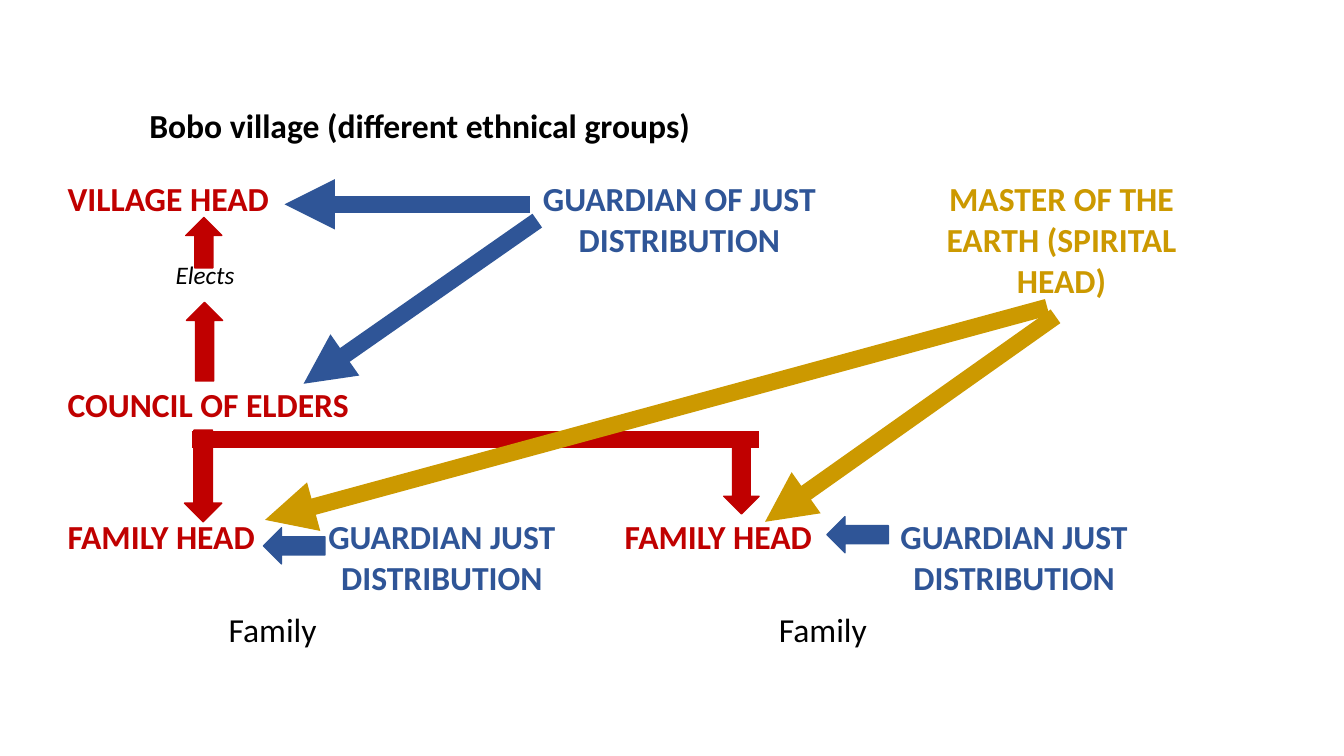
from lxml import etree
from pptx import Presentation
from pptx import util as u
from pptx.dml.color import RGBColor
from pptx.enum import shapes, text
from pptx.oxml.ns import qn

RED, BLUE, GOLD, BLACK = "C00000", "2F5597", "CC9900", "000000"
LEFT, CENTER, RIGHT = text.PP_ALIGN.LEFT, text.PP_ALIGN.CENTER, text.PP_ALIGN.RIGHT
NO_STYLE = "{2D5ABB26-0587-4C30-8999-92F81FD0307C}"

COLS = [5.33, 4.32, 1.19, 3.2, 5.26, 1.35, 1.04, 3.61, 3.61]
ROWS = [3.33, 1.85, 3.33, 2.34, 1.17]
SPANS = [[2, 5, 2], [4, 1, 2, 1, 1], [4, 1, 2, 1, 1], [1, 3, 1, 4], [3, 1, 2, 2, 1]]
ROLES = [
    (0, 0, "VILLAGE HEAD", RED, LEFT, True),
    (0, 2, "GUARDIAN OF JUST DISTRIBUTION", BLUE, CENTER, True),
    (0, 7, "MASTER OF THE EARTH (SPIRITAL HEAD)", GOLD, CENTER, True),
    (2, 0, "COUNCIL OF ELDERS", RED, LEFT, True),
    (3, 0, "FAMILY HEAD", RED, LEFT, True),
    (3, 1, "GUARDIAN JUST DISTRIBUTION", BLUE, CENTER, True),
    (3, 4, "FAMILY HEAD", RED, LEFT, True),
    (3, 5, "GUARDIAN JUST DISTRIBUTION", BLUE, CENTER, True),
    (4, 0, "Family", BLACK, CENTER, False),
    (4, 4, "Family", BLACK, RIGHT, False),
]
BLOCK_ARROWS = [
    (3.2, 6.45, 0.94, 2.31, 0, RED),
    (16.79, 6.88, 0.89, 1.68, 0, RED),
    (3.23, 1.09, 0.91, 1.27, 180, RED),
    (3.25, 3.23, 0.91, 1.98, 180, RED),
    (19.71, 8.31, 0.91, 1.55, 90, BLUE),
    (5.51, 8.59, 0.91, 1.55, 90, BLUE),
]
LINES = [
    (3.38, 6.68, 17.68, 6.68, RED, False),
    (12.09, 1.17, 6.2, 5.28, BLUE, True),
    (25.15, 3.58, 17.83, 8.76, GOLD, True),
    (24.94, 3.35, 5.23, 8.71, GOLD, True),
    (11.91, 0.76, 5.72, 0.76, BLUE, True),
]


def rgb(value):
    return RGBColor.from_string(value)


def write(p, content, size=24, color=BLACK, bold=False, italic=False, align=LEFT):
    p.alignment = align
    r = p.add_run()
    r.text = content
    r.font.name = "Calibri"
    r.font.size = u.Pt(size)
    r.font.bold = bold
    r.font.italic = italic
    r.font.color.rgb = rgb(color)


def add_title(s, left, top, width, height):
    sp = s.shapes.title
    sp.left, sp.top, sp.width, sp.height = map(u.Cm, (left, top, width, height))
    tf = sp.text_frame
    tf.word_wrap = False
    tf.auto_size = text.MSO_AUTO_SIZE.NONE
    tf.vertical_anchor = text.MSO_ANCHOR.TOP
    write(tf.paragraphs[0], "Bobo village (different ethnical groups)", bold=True)


def add_roles(s, left, top):
    box = map(u.Cm, (left, top, sum(COLS), sum(ROWS)))
    table = s.shapes.add_table(len(ROWS), len(COLS), *box).table
    table.first_row = table.horz_banding = False
    table._tbl.tblPr.find(qn("a:tableStyleId")).text = NO_STYLE
    for column, width in zip(table.columns, COLS):
        column.width = u.Cm(width)
    for row, height in zip(table.rows, ROWS):
        row.height = u.Cm(height)
    for cell in table.iter_cells():
        cell.fill.background()
    for row, spans in enumerate(SPANS):
        start = 0
        for span in spans:
            if span > 1:
                table.cell(row, start).merge(table.cell(row, start + span - 1))
            start += span
    for row, col, content, color, align, bold in ROLES:
        p = table.cell(row, col).text_frame.paragraphs[0]
        write(p, content, color=color, bold=bold, align=align)
    p = table.cell(0, 0).text_frame.add_paragraph()
    write(p, "Elects", size=18, italic=True)
    p.space_before = u.Pt(29)
    p._p.get_or_add_pPr().set("marL", str(u.Cm(2.72)))


def add_block_arrow(s, left, top, width, height, rotation, color):
    box = map(u.Cm, (left, top, width, height))
    sp = s.shapes.add_shape(shapes.MSO_SHAPE.DOWN_ARROW, *box)
    sp.rotation = rotation
    sp.shadow.inherit = False
    sp.fill.solid()
    sp.fill.fore_color.rgb = rgb(color)
    sp.line.color.rgb = rgb(color)
    sp.line.width = u.Pt(1)


def add_line(s, x1, y1, x2, y2, color, arrow):
    ends = map(u.Cm, (x1, y1, x2, y2))
    line = s.shapes.add_connector(shapes.MSO_CONNECTOR.STRAIGHT, *ends)
    line.line.color.rgb = rgb(color)
    line.line.width = u.Pt(12)
    if arrow:
        etree.SubElement(line.line._get_or_add_ln(), qn("a:tailEnd"), type="triangle")
    etree.SubElement(line._element.spPr, qn("a:effectLst"))


def add_arrows(s, left, top):
    for x, y, width, height, rotation, color in BLOCK_ARROWS:
        add_block_arrow(s, left + x, top + y, width, height, rotation, color)
    for x1, y1, x2, y2, color, arrow in LINES:
        add_line(s, left + x1, top + y1, left + x2, top + y2, color, arrow)


def main():
    prs = Presentation()
    prs.slide_width, prs.slide_height = u.Cm(33.87), u.Cm(19.05)
    s = prs.slides.add_slide(prs.slide_layouts[5])
    add_title(s, 3.51, 2.51, 14.3, 2.31)
    add_roles(s, 1.45, 4.39)
    add_arrows(s, 1.45, 4.39)
    prs.save("out.pptx")


if __name__ == "__main__":
    main()
